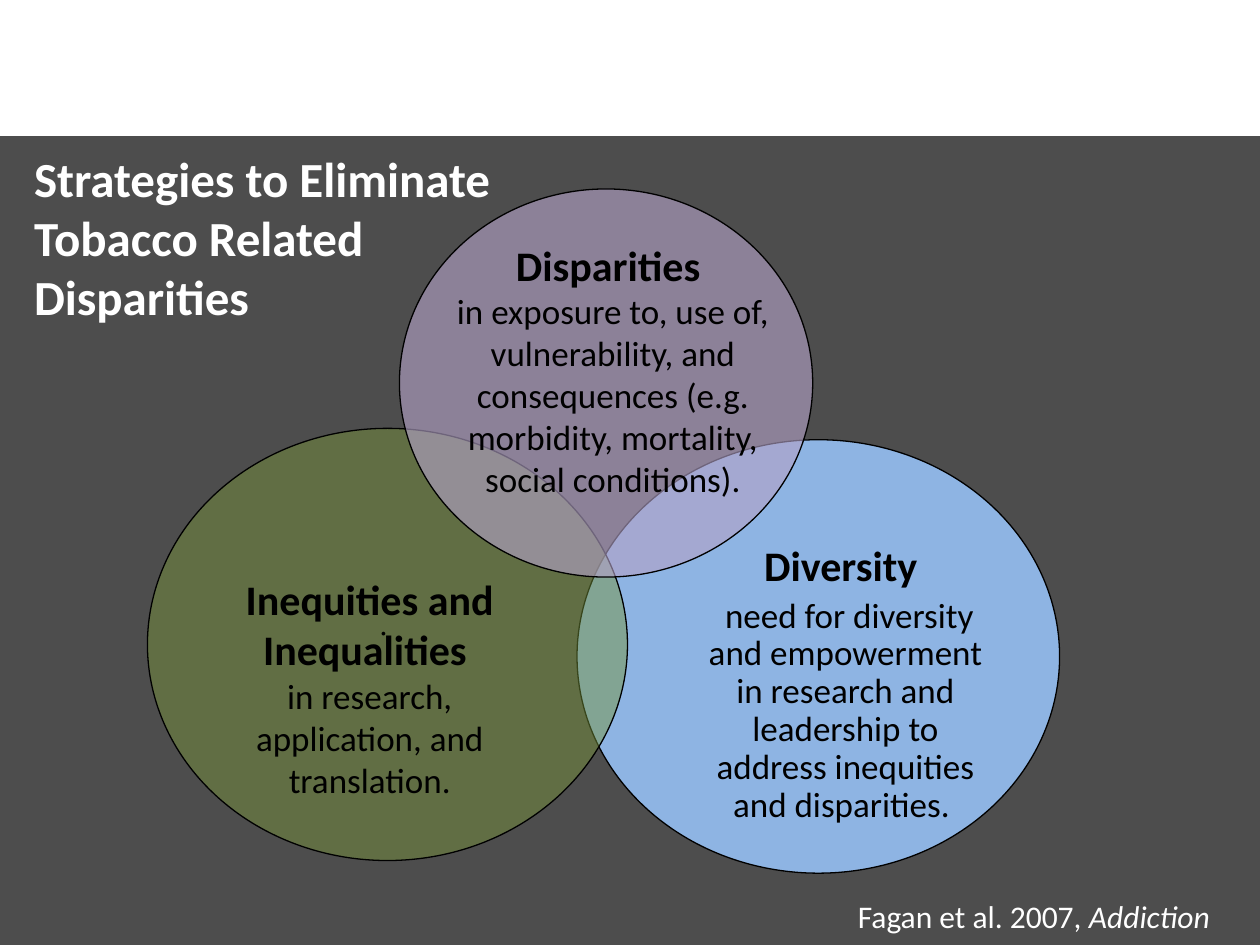
from lxml import etree
from pptx import Presentation
from pptx.dml.color import RGBColor
from pptx.enum import shapes, text
from pptx.oxml import ns
from pptx.util import Inches, Pt

COLORS = {
    "band": "4D4D4D",
    "diversity": "8EB4E3",
    "inequities": "77933C",
    "disparities": "B3A2C7",
    "ink": "000000",
    "light": "FFFFFF",
}


def color(name):
    return RGBColor.from_string(COLORS[name])


def style(font, size, name, bold=False, face="Calibri"):
    font.name, font.size, font.bold = face, Pt(size), bold
    font.color.rgb = color(name)


def add_filled(page, preset, box, name, opacity=100):
    """Add a flat shape; opacity is a percentage."""
    shape = page.shapes.add_shape(preset, *map(Inches, box))
    shape.shadow.inherit = False
    shape.fill.solid()
    shape.fill.fore_color.rgb = color(name)
    if opacity < 100:
        rgb = shape.fill._xPr.find(".//" + ns.qn("a:srgbClr"))
        etree.SubElement(rgb, ns.qn("a:alpha"), val=str(opacity * 1000))
    return shape


def add_circle(page, box, name, opacity=100):
    circle = add_filled(page, shapes.MSO_SHAPE.OVAL, box, name, opacity)
    circle.line.color.rgb = color("ink")
    circle.line.width = Pt(0.75)
    return circle


def add_text(page, box):
    frame = page.shapes.add_textbox(*map(Inches, box)).text_frame
    frame.word_wrap = True
    return frame


def add_topic(page, box, heading, body, spacing=None, gap=0):
    """Add a bold heading over body text, both centred."""
    frame = add_text(page, box)
    head, para = frame.paragraphs[0], frame.add_paragraph()
    for item, words, size in ((head, heading, 24), (para, body, 20)):
        item.text = words
        item.alignment = text.PP_ALIGN.CENTER
        item.line_spacing = spacing
        style(item.font, size, "ink", bold=item is head)
    para.space_before = Pt(gap)


def add_title(page, box, words):
    title = page.shapes.title
    title.left, title.top, title.width, title.height = map(Inches, box)
    frame = title.text_frame
    frame.text = words
    frame.word_wrap = True
    frame.auto_size = text.MSO_AUTO_SIZE.NONE
    frame.vertical_anchor = text.MSO_ANCHOR.MIDDLE
    para = frame.paragraphs[0]
    para.alignment = text.PP_ALIGN.LEFT
    style(para.font, 28, "light", bold=True)


def add_band(page, box):
    """Add the dark background band behind the title."""
    band = add_filled(page, shapes.MSO_SHAPE.RECTANGLE, box, "band")
    band.line.fill.background()
    page.shapes.title.element.addprevious(band.element)


def add_circles(page):
    add_circle(page, (4.58, 3.49, 3.83, 3.44), "diversity")
    inequities = add_circle(page, (1.17, 3.4, 3.81, 3.43), "inequities", 48)
    frame = inequities.text_frame
    frame.word_wrap = False
    frame.vertical_anchor = text.MSO_ANCHOR.MIDDLE
    frame.margin_bottom = Inches(0.35)
    para = frame.paragraphs[0]
    para.text = ". "
    para.alignment = text.PP_ALIGN.CENTER
    para.line_spacing = 0.9
    style(para.font, 18, "ink", face="Times New Roman")
    add_circle(page, (3.17, 1.5, 3.28, 3.08), "disparities", 62)


def add_topics(page):
    add_topic(page, (3.28, 1.85, 3.17, 2.19), "Disparities ",
              "in exposure to, use of, vulnerability, and consequences "
              "(e.g. morbidity, mortality, social conditions).")
    add_topic(page, (1.6, 4.5, 2.67, 1.92), "Inequities and Inequalities ",
              "in research, application, and translation.")
    add_topic(page, (5.42, 4.28, 2.58, 2.69), "Diversity ",
              " need for diversity and empowerment in research and "
              "leadership to address inequities and disparities. ",
              spacing=0.9, gap=4)


def add_citation(page, box, authors, journal):
    para = add_text(page, box).paragraphs[0]
    para.add_run().text = authors
    span = para.add_run()
    span.text = journal
    span.font.italic = True
    style(para.font, 18, "light")


def main():
    deck = Presentation()
    deck.slide_width, deck.slide_height = Inches(10), Inches(7.5)
    page = deck.slides.add_slide(deck.slide_layouts[5])
    add_band(page, (0, 1.08, 10, 6.42))
    add_title(page, (0.17, 1.42, 4.42, 0.92),
              "Strategies to Eliminate Tobacco Related Disparities")
    add_circles(page)
    add_topics(page)
    add_citation(page, (6.71, 7.07, 3.42, 0.4),
                 "Fagan et al. 2007, ", "Addiction")
    deck.save("out.pptx")


if __name__ == "__main__":
    main()
